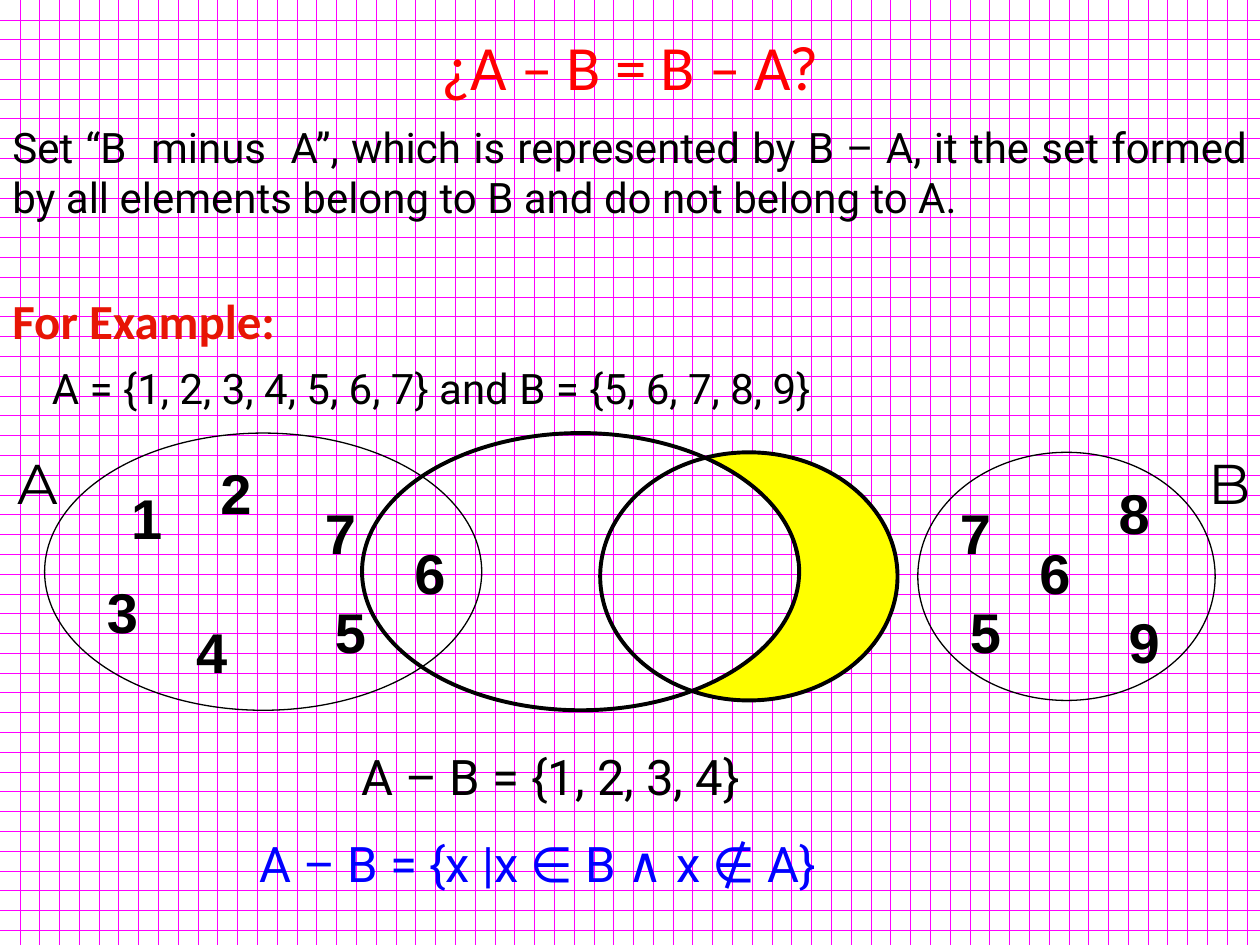
from math import cos, radians, sin

from lxml import etree
from pptx import Presentation
from pptx.dml.color import RGBColor
from pptx.enum.dml import MSO_PATTERN
from pptx.enum.shapes import MSO_SHAPE
from pptx.enum.text import MSO_AUTO_SIZE, PP_ALIGN
from pptx.oxml.ns import qn
from pptx.util import Pt

DOT_GRID = MSO_PATTERN.DOTTED_GRID
ELLIPSE = MSO_SHAPE.OVAL
LEFT, CENTER, JUSTIFY = PP_ALIGN.LEFT, PP_ALIGN.CENTER, PP_ALIGN.JUSTIFY
GROW = MSO_AUTO_SIZE.SHAPE_TO_FIT_TEXT

COLORS = {
    "black": "000000", "white": "FFFFFF", "grid": "FF00FF", "yellow": "FFFF00",
    "title": "FF0000", "example": "E71505", "formula": "0000FF",
}
COLORS = {name: RGBColor.from_string(value) for name, value in COLORS.items()}

prs = Presentation()
prs.slide_width, prs.slide_height = Pt(720), Pt(540)
slide = prs.slides.add_slide(prs.slide_layouts[6])
shapes = slide.shapes

paper = slide.background.fill
paper.patterned()
paper.pattern = DOT_GRID
paper.fore_color.rgb = COLORS["grid"]
paper.back_color.rgb = COLORS["white"]


def add_text(text, left, top, width, height, size=32, font="Roboto",
             color="black", bold=False, align=LEFT):
    box = shapes.add_textbox(Pt(left), Pt(top), Pt(width), Pt(height))
    frame = box.text_frame
    frame.word_wrap = True
    frame.auto_size = GROW
    paragraph = frame.paragraphs[0]
    paragraph.alignment = align
    run = paragraph.add_run()
    run.text = text
    run.font.size = Pt(size)
    run.font.name = font
    run.font.bold = bold
    run.font.color.rgb = COLORS[color]
    return run


def arc_points(bounds, start, end, steps):
    """Points along an ellipse's outline, angles in degrees clockwise from the right."""
    left, top, width, height = bounds
    angles = [radians(start + (end - start) * i / steps) for i in range(steps + 1)]
    return [(left + width / 2 * (1 + cos(angle)), top + height / 2 * (1 + sin(angle)))
            for angle in angles]


# Sets as left, top, width, height
A_SIZE, B_SIZE = (249.8, 158.4), (169.9, 141.8)
set_a = (25.5, 247.5, *A_SIZE)
set_b = (524.5, 258.5, *B_SIZE)
middle_a = (206.9, 247.5, *A_SIZE)
middle_b = (343, 258.5, *B_SIZE)

# B - A: the arc of B outside A, then back along the arc of A inside B
crescent = arc_points(middle_b, -107, 112.4, 22) + arc_points(middle_a, 59.3, -55.4, 11)
builder = shapes.build_freeform(*crescent[0], scale=Pt(1))
builder.add_line_segments(crescent[1:], close=True)
difference = builder.convert_to_shape()
difference.shadow.inherit = False
difference.fill.solid()
difference.fill.fore_color.rgb = COLORS["yellow"]
difference.line.color.rgb = COLORS["black"]
difference.line.width = Pt(0.75)

for bounds, line_width in ((set_a, 0.75), (set_b, 0.75), (middle_b, 2.25), (middle_a, 2.25)):
    circle = shapes.add_shape(ELLIPSE, *map(Pt, bounds))
    circle.shadow.inherit = False
    circle.fill.background()
    circle.line.color.rgb = COLORS["black"]
    circle.line.width = Pt(line_width)

elements = [
    # Set A
    ("1", 67.9, 272.9), ("2", 118.8, 258.5), ("3", 54, 326.7), ("4", 105, 349.2),
    ("5", 184.3, 337.7), ("6", 229.7, 304), ("7", 178.6, 281.2),
    # Set B
    ("5", 547.2, 337.7), ("6", 586.8, 304), ("7", 541.4, 281.5),
    ("8", 632.2, 270), ("9", 637.9, 343.4),
]
for element, left, top in elements:
    add_text(element, left, top, 33.8, 45.4, font="Arial", bold=True)

for set_name, left in (("A", 2.9), ("B", 683.3)):
    add_text(set_name, left, 252.7, 51.1, 45.4, font="Montserrat")

title = add_text("¿A – B = B – A?", 181.4, 12.2, 357.1, 45.4, size=36,
                 font="Calibri", color="title", align=CENTER)
text_outline = etree.Element(qn("a:ln"), w=str(Pt(0.75)))
outline_fill = etree.SubElement(text_outline, qn("a:solidFill"))
etree.SubElement(outline_fill, qn("a:srgbClr"), val=str(COLORS["black"]))
title.font._element.insert(0, text_outline)

add_text("Set “B  minus  A”, which is represented by B – A, it the set formed "
         "by all elements belong to B and do not belong to A.",
         0, 65.8, 720, 94.3, size=24, align=JUSTIFY)
add_text("For Example:", 0, 162.4, 260.6, 41, size=28, font="Calibri",
         color="example", bold=True)
add_text("A = {1, 2, 3, 4, 5, 6, 7} and B = {5, 6, 7, 8, 9}",
         22.6, 203.8, 674.6, 36, size=24)
add_text("A – B = {1, 2, 3, 4}", 199.4, 423.2, 321.1, 41, size=28)
add_text("A – B = {x |x ∈ B ∧ x ∉ A}", 141.1, 472.6, 437.8, 41, size=28, color="formula")

prs.save("out.pptx")
